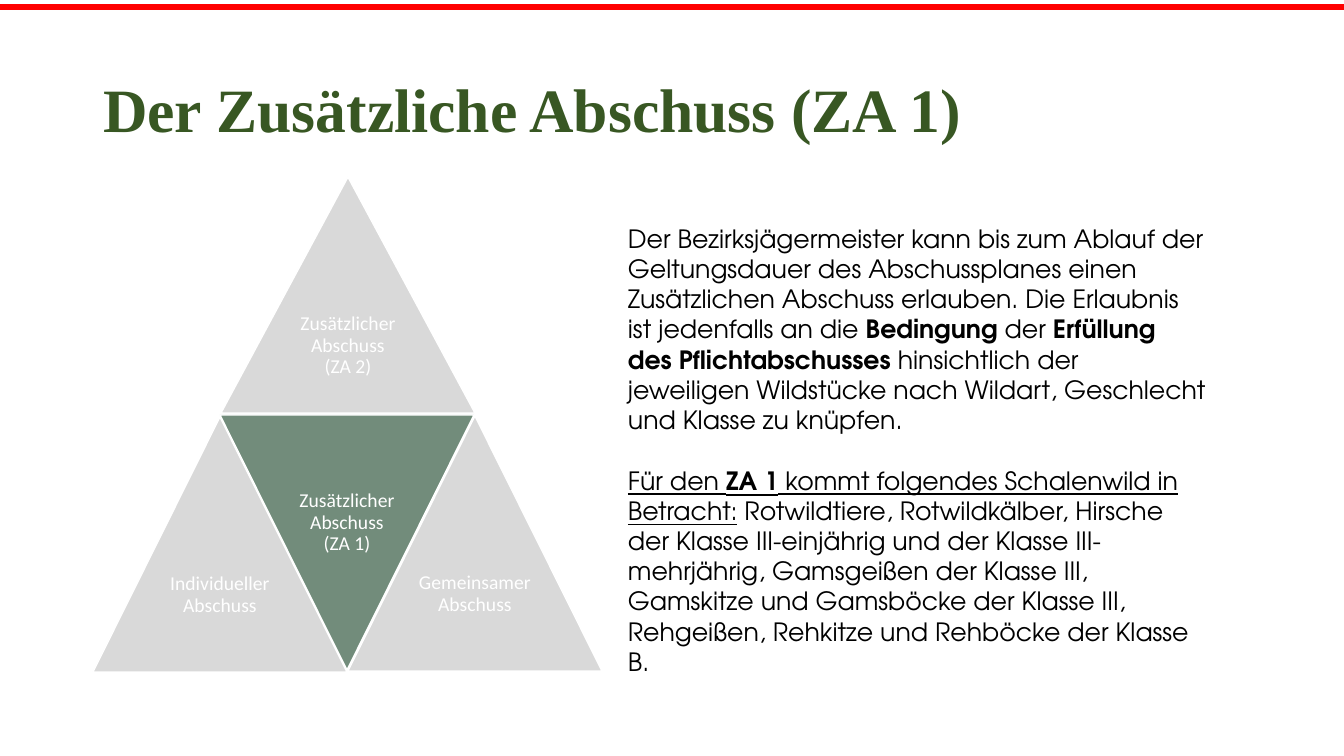
from pptx import Presentation
from pptx.dml.color import RGBColor
from pptx.enum.shapes import MSO_CONNECTOR
from pptx.enum.text import MSO_ANCHOR, MSO_AUTO_SIZE, PP_ALIGN
from pptx.oxml.ns import qn
from pptx.util import Pt
from lxml.etree import SubElement

EMU_PER_PX = 914400 / 100.8
WIDTH, HEIGHT = 1344, 756

TITLE = "Der Zusätzliche Abschuss (ZA 1)"
BOLD, UNDERLINE = {"bold": True}, {"underline": True}
BODY = [
    [("Der Bezirksjägermeister kann bis zum Ablauf der Geltungsdauer des "
      "Abschussplanes einen Zusätzlichen Abschuss erlauben. Die Erlaubnis "
      "ist jedenfalls an die ", {}),
     ("Bedingung", BOLD),
     (" der ", {}),
     ("Erfüllung des Pflichtabschusses ", BOLD),
     ("hinsichtlich der jeweiligen Wildstücke nach Wildart, Geschlecht und "
      "Klasse zu knüpfen.", {})],
    [("Für den ", UNDERLINE),
     ("ZA 1", BOLD | UNDERLINE),
     (" kommt folgendes Schalenwild in Betracht:", UNDERLINE),
     (" Rotwildtiere, Rotwildkälber, Hirsche der Klasse III-einjährig und der "
      "Klasse III-mehrjährig, Gamsgeißen der Klasse III, Gamskitze und "
      "Gamsböcke der Klasse III, Rehgeißen, Rehkitze und Rehböcke der "
      "Klasse B.", {})],
]
# label, left, base y, tip y, fill, space above the label
TRIANGLES = [
    ("Zusätzlicher Abschuss\n(ZA 2)", 221, 413, 177, "D9D9D9", 137),
    ("Individueller Abschuss", 93, 672, 417, "D9D9D9", 157),
    ("Zusätzlicher Abschuss\n(ZA 1)", 220, 415, 670, "728C7B", 76),
    ("Gemeinsamer Abschuss", 348, 671, 416, "D9D9D9", 157),
]
HALF_BASE, SIDE_INSET = 127, 70

TITLE_FONT = {"name": "Times New Roman", "size": Pt(44), "bold": True}
BODY_FONT = {"name": "TeX Gyre Adventor", "size": Pt(18)}
LABEL_FONT = {"name": "Calibri", "size": Pt(14)}


def px(n):
    return round(n * EMU_PER_PX)


def rgb(value):
    return RGBColor.from_string(value)


def set_attrs(obj, values):
    for name, value in values.items():
        setattr(obj, name, value)


def style_run(r, font, color):
    set_attrs(r.font, font)
    r.font.color.rgb = rgb(color)


def place(sp, left, top, width, height):
    set_attrs(sp, {"left": px(left), "top": px(top),
                   "width": px(width), "height": px(height)})


def add_top_rule(slide):
    line = slide.shapes.add_connector(
        MSO_CONNECTOR.STRAIGHT, 0, px(7), px(WIDTH), px(7))
    line.line.color.rgb = rgb("FF0000")
    line.line.width = Pt(4.5)
    SubElement(line._element.spPr, qn("a:effectLst"))


def add_title(slide):
    sp = slide.shapes.title
    place(sp, 93, 40, 1159, 146)
    tf = sp.text_frame
    tf.text = TITLE
    set_attrs(tf, {"auto_size": MSO_AUTO_SIZE.NONE, "word_wrap": True,
                   "vertical_anchor": MSO_ANCHOR.MIDDLE})
    p = tf.paragraphs[0]
    set_attrs(p, {"alignment": PP_ALIGN.LEFT, "line_spacing": 0.9})
    style_run(p.runs[0], TITLE_FONT, "385723")


def add_body(slide):
    sp = slide.shapes.add_textbox(px(618), px(218), px(598), px(437))
    tf = sp.text_frame
    tf.word_wrap = True
    for i, runs in enumerate(BODY):
        p = tf.add_paragraph() if i else tf.paragraphs[0]
        if i:
            p.space_before = Pt(21.6)
        for text, emphasis in runs:
            r = p.add_run()
            r.text = text
            style_run(r, BODY_FONT | emphasis, "000000")


def add_triangle(slide, label, left, base, tip, fill, label_top):
    builder = slide.shapes.build_freeform(left, base, scale=EMU_PER_PX)
    builder.add_line_segments(
        [(left + HALF_BASE, tip), (left + 2 * HALF_BASE, base)], close=True)
    sp = builder.convert_to_shape()
    sp.shadow.inherit = False
    sp.fill.solid()
    sp.fill.fore_color.rgb = rgb(fill)
    sp.line.color.rgb = rgb("FFFFFF")
    sp.line.width = Pt(1)
    tf = sp.text_frame
    tf.text = label
    set_attrs(tf, {"word_wrap": True, "vertical_anchor": MSO_ANCHOR.TOP,
                   "margin_left": px(SIDE_INSET), "margin_right": px(SIDE_INSET),
                   "margin_top": px(label_top), "margin_bottom": 0})
    for p in tf.paragraphs:
        set_attrs(p, {"alignment": PP_ALIGN.CENTER, "line_spacing": 0.9})
        style_run(p.runs[0], LABEL_FONT, "FFFFFF")


def main():
    prs = Presentation()
    set_attrs(prs, {"slide_width": px(WIDTH), "slide_height": px(HEIGHT)})
    slide = prs.slides.add_slide(prs.slide_layouts.get_by_name("Title Only"))
    add_top_rule(slide)
    add_title(slide)
    add_body(slide)
    for triangle in TRIANGLES:
        add_triangle(slide, *triangle)
    prs.save("out.pptx")


if __name__ == "__main__":
    main()
